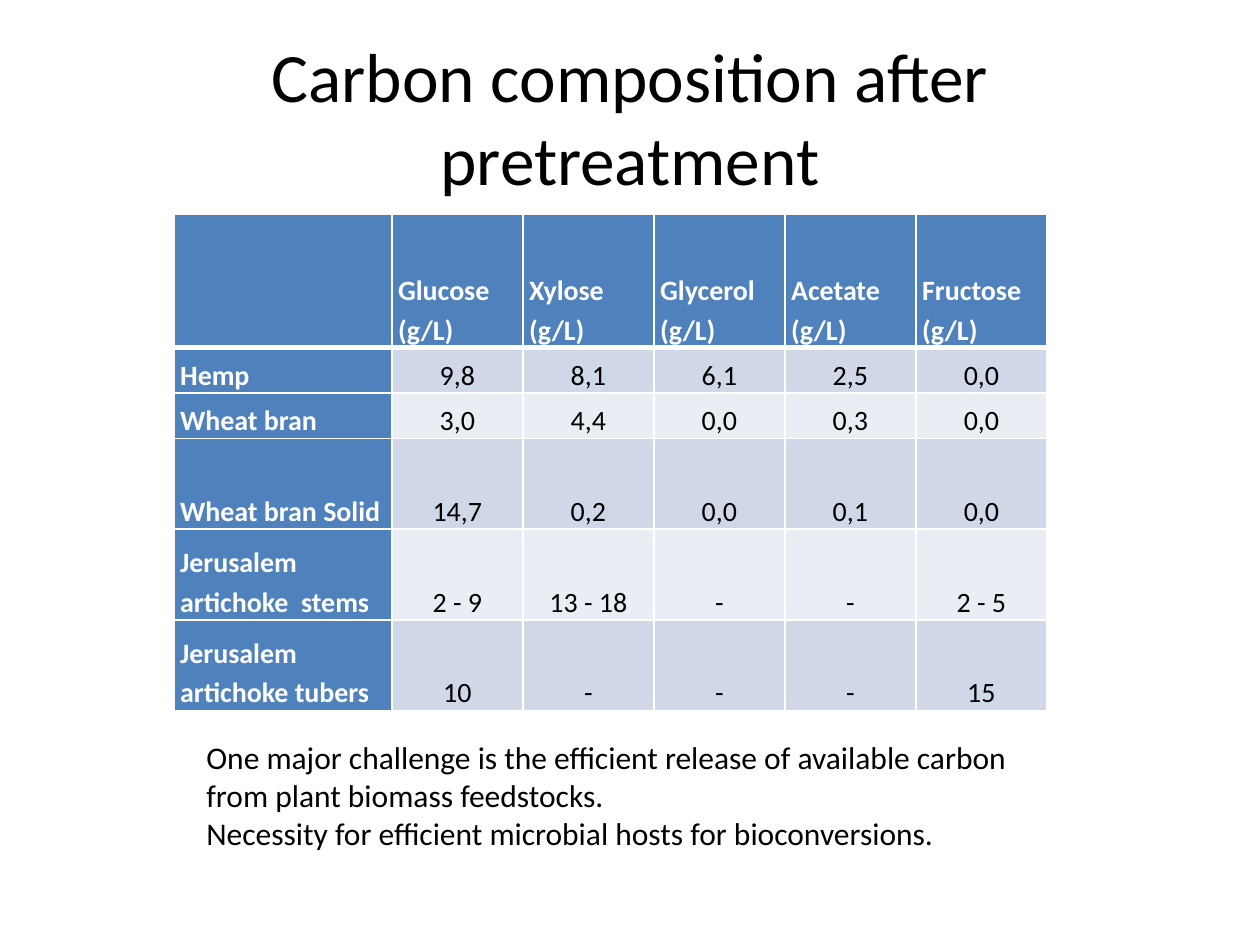
from pptx import Presentation
from pptx.dml.color import RGBColor
from pptx.enum.text import MSO_ANCHOR as Anchor, PP_ALIGN as Align
from pptx.oxml import parse_xml
from pptx.oxml.ns import nsdecls
from pptx.util import Inches, Pt

WHITE = RGBColor(0xFF, 0xFF, 0xFF)
BLACK = RGBColor(0, 0, 0)
BLUE = RGBColor(0x4F, 0x81, 0xBD)
BANDS = [RGBColor(0xD0, 0xD8, 0xE8), RGBColor(0xE9, 0xED, 0xF4)]
FONT = "Calibri"

COLUMN_WIDTHS = [1.73] + [1.04] * 5
ROW_HEIGHTS = [1.06] + [0.36] * 2 + [0.72] * 3
SUGARS = ["Glucose", "Xylose", "Glycerol", "Acetate", "Fructose"]
FEEDSTOCKS = [
    ["Hemp", "9,8", "8,1", "6,1", "2,5", "0,0"],
    ["Wheat bran", "3,0", "4,4", "0,0", "0,3", "0,0"],
    ["Wheat bran Solid", "14,7", "0,2", "0,0", "0,1", "0,0"],
    ["Jerusalem artichoke  stems", "2 - 9", "13 - 18", "-", "-", "2 - 5"],
    ["Jerusalem artichoke tubers", "10", "-", "-", "-", "15"],
]
REMARKS = [
    "One major challenge is the efficient release of available carbon "
    "from plant biomass feedstocks.",
    "Necessity for efficient microbial hosts for bioconversions.",
]


def add_span(para, text, size, color=BLACK, bold=False):
    span = para.add_run()
    span.text = text
    span.font.name = FONT
    span.font.size = Pt(size)
    span.font.bold = bold
    span.font.color.rgb = color


def place(shape, left, top, width, height):
    shape.left, shape.top = Inches(left), Inches(top)
    shape.width, shape.height = Inches(width), Inches(height)


def add_title(page, text):
    title = page.shapes.title
    place(title, 0.5, 0.3, 9, 1.25)
    frame = title.text_frame
    frame.word_wrap = True
    frame.vertical_anchor = Anchor.MIDDLE
    frame.margin_left = frame.margin_right = Inches(0.2)
    para = frame.paragraphs[0]
    para.alignment = Align.CENTER
    add_span(para, text, 39.6)


def set_borders(cell, bottom):
    properties = cell._tc.get_or_add_tcPr()
    sides = [("lnL", 1), ("lnR", 1), ("lnT", 1), ("lnB", bottom)]
    for position, (side, width) in enumerate(sides):
        properties.insert(position, parse_xml(
            f'<a:{side} {nsdecls("a")} w="{Pt(width)}"><a:solidFill>'
            f'<a:srgbClr val="{WHITE}"/></a:solidFill></a:{side}>'))


def fill_cell(cell, text, row, column):
    heading = row == 0 or column == 0
    cell.fill.solid()
    cell.fill.fore_color.rgb = BLUE if heading else BANDS[(row - 1) % 2]
    set_borders(cell, 3 if row == 0 else 1)
    cell.vertical_anchor = Anchor.BOTTOM
    cell.margin_left = cell.margin_right = Inches(0.05)
    cell.margin_top = cell.margin_bottom = 0
    if text:
        para = cell.text_frame.paragraphs[0]
        para.alignment = Align.LEFT if heading else Align.CENTER
        para.line_spacing = 1.15
        add_span(para, text, 16, WHITE if heading else BLACK, heading)


def add_composition_table(page):
    rows = [[""] + [f"{sugar} (g/L)" for sugar in SUGARS]] + FEEDSTOCKS
    table = page.shapes.add_table(
        len(rows), len(COLUMN_WIDTHS), Inches(1.38), Inches(1.7),
        Inches(sum(COLUMN_WIDTHS)), Inches(sum(ROW_HEIGHTS))).table
    table.first_col = True
    for column, width in zip(table.columns, COLUMN_WIDTHS):
        column.width = Inches(width)
    for row, height in zip(table.rows, ROW_HEIGHTS):
        row.height = Inches(height)
    for row, texts in enumerate(rows):
        for column, text in enumerate(texts):
            fill_cell(table.cell(row, column), text, row, column)


def add_remarks(page):
    box = page.shapes.add_textbox(0, 0, 0, 0)
    place(box, 1.54, 5.81, 6.77, 1.01)
    frame = box.text_frame
    frame.word_wrap = True
    for index, remark in enumerate(REMARKS):
        para = frame.add_paragraph() if index else frame.paragraphs[0]
        add_span(para, remark, 18)


def main():
    deck = Presentation()
    deck.slide_width, deck.slide_height = Inches(10), Inches(7.5)
    page = deck.slides.add_slide(deck.slide_layouts.get_by_name("Title Only"))
    add_title(page, "Carbon composition after pretreatment")
    add_composition_table(page)
    add_remarks(page)
    deck.save("out.pptx")


if __name__ == "__main__":
    main()
